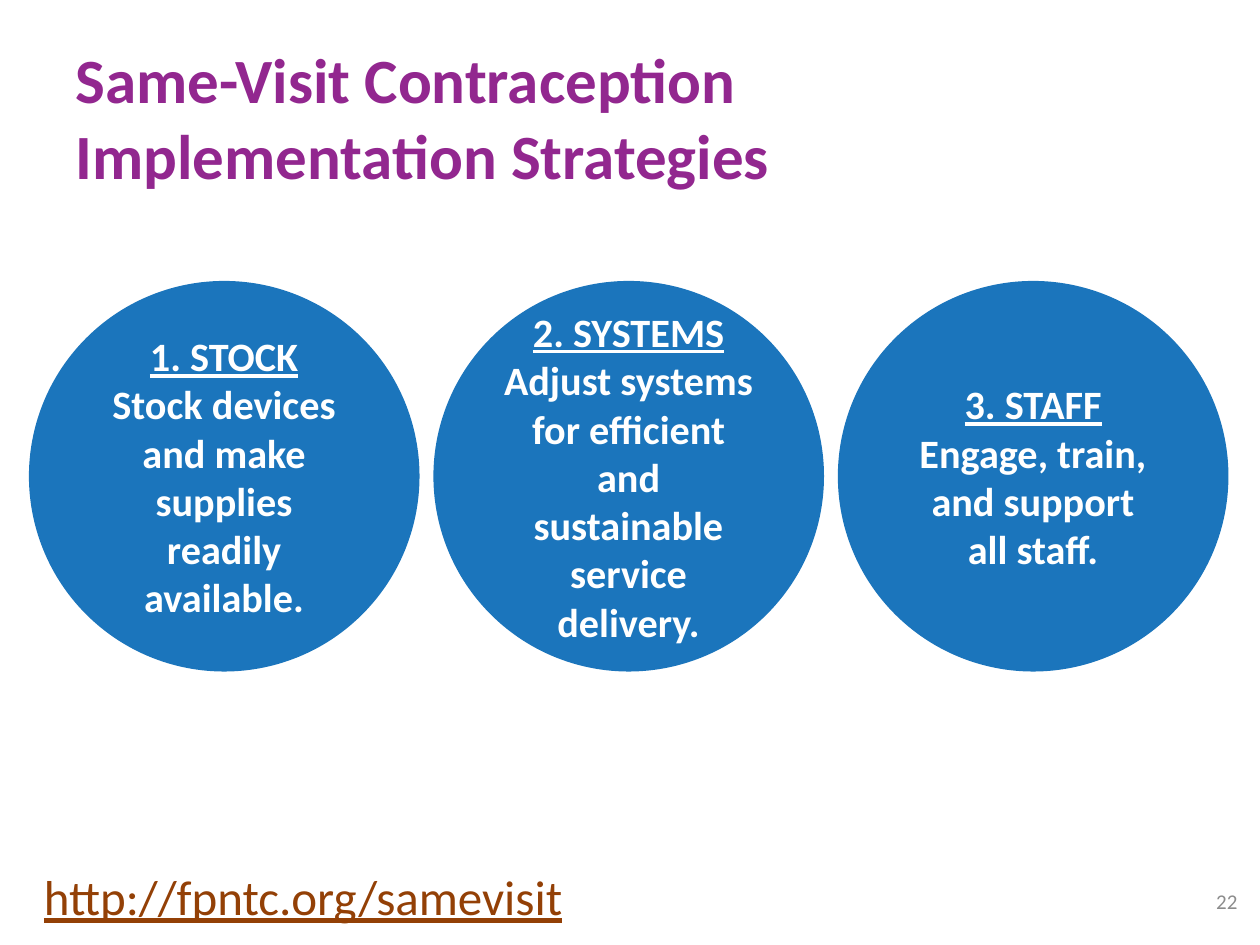
from pptx import Presentation
from pptx.dml.color import RGBColor
from pptx.enum.shapes import MSO_SHAPE
from pptx.enum.text import MSO_ANCHOR as ANCHOR, PP_ALIGN as ALIGN
from pptx.util import Inches, Pt

# Content
TITLE = "Same-Visit Contraception Implementation Strategies"
STRATEGIES = [
    ("1. STOCK", "Stock devices and make supplies readily available."),
    ("2. SYSTEMS", "Adjust systems for efficient and sustainable service delivery."),
    ("3. STAFF", "Engage, train, and support all staff."),
]
URL = "http://fpntc.org/samevisit"
PAGE = "22"

# Layout in inches
LEFT, TOP, DIAMETER, GAP = 0.23, 2.23, 3.1, 0.11


def rgb(value):
    return RGBColor.from_string(value)


def write(p, text, size, color, align=ALIGN.LEFT, **formats):
    p.alignment = align
    r = p.add_run()
    r.text = text
    r.font.color.rgb = rgb(color)
    for name, value in {"name": "Calibri", "size": Pt(size), **formats}.items():
        setattr(r.font, name, value)


def place(sp, *box):
    sp.left, sp.top, sp.width, sp.height = map(Inches, box)


def add_text(s, box, anchor, wrap, *args, **formats):
    tf = s.shapes.add_textbox(*map(Inches, box)).text_frame
    tf.word_wrap, tf.vertical_anchor = wrap, anchor
    write(tf.paragraphs[0], *args, **formats)


prs = Presentation()
prs.slide_width, prs.slide_height = Inches(10), Inches(7.5)
s = prs.slides.add_slide(prs.slide_layouts[5])

# Title
title = s.shapes.title
place(title, 0.5, 0.3, 6.75, 1.25)
title.text_frame.vertical_anchor = ANCHOR.MIDDLE
write(title.text_frame.paragraphs[0], TITLE, 36, "92278F", bold=True)

# Strategy circles
for i, (heading, detail) in enumerate(STRATEGIES):
    x = LEFT + i * (DIAMETER + GAP)
    sp = s.shapes.add_shape(MSO_SHAPE.OVAL, *map(Inches, (x, TOP, DIAMETER, DIAMETER)))
    sp.shadow.inherit = False
    sp.fill.solid()
    sp.fill.fore_color.rgb = rgb("1B75BC")
    sp.line.fill.background()
    tf = sp.text_frame
    tf.word_wrap, tf.vertical_anchor = True, ANCHOR.MIDDLE
    write(tf.paragraphs[0], heading, 23, "FFFFFF", ALIGN.CENTER, bold=True, underline=True)
    write(tf.add_paragraph(), detail, 23, "FFFFFF", ALIGN.CENTER, bold=True)

# Page number and web address
add_text(s, (9.42, 6.95, 0.5, 0.4), ANCHOR.MIDDLE, True, PAGE, 12, "8C8C8C", ALIGN.RIGHT)
add_text(s, (0.25, 6.83, 4.46, 0.57), ANCHOR.TOP, False, URL, 28, "934006", underline=True)

prs.save("out.pptx")
